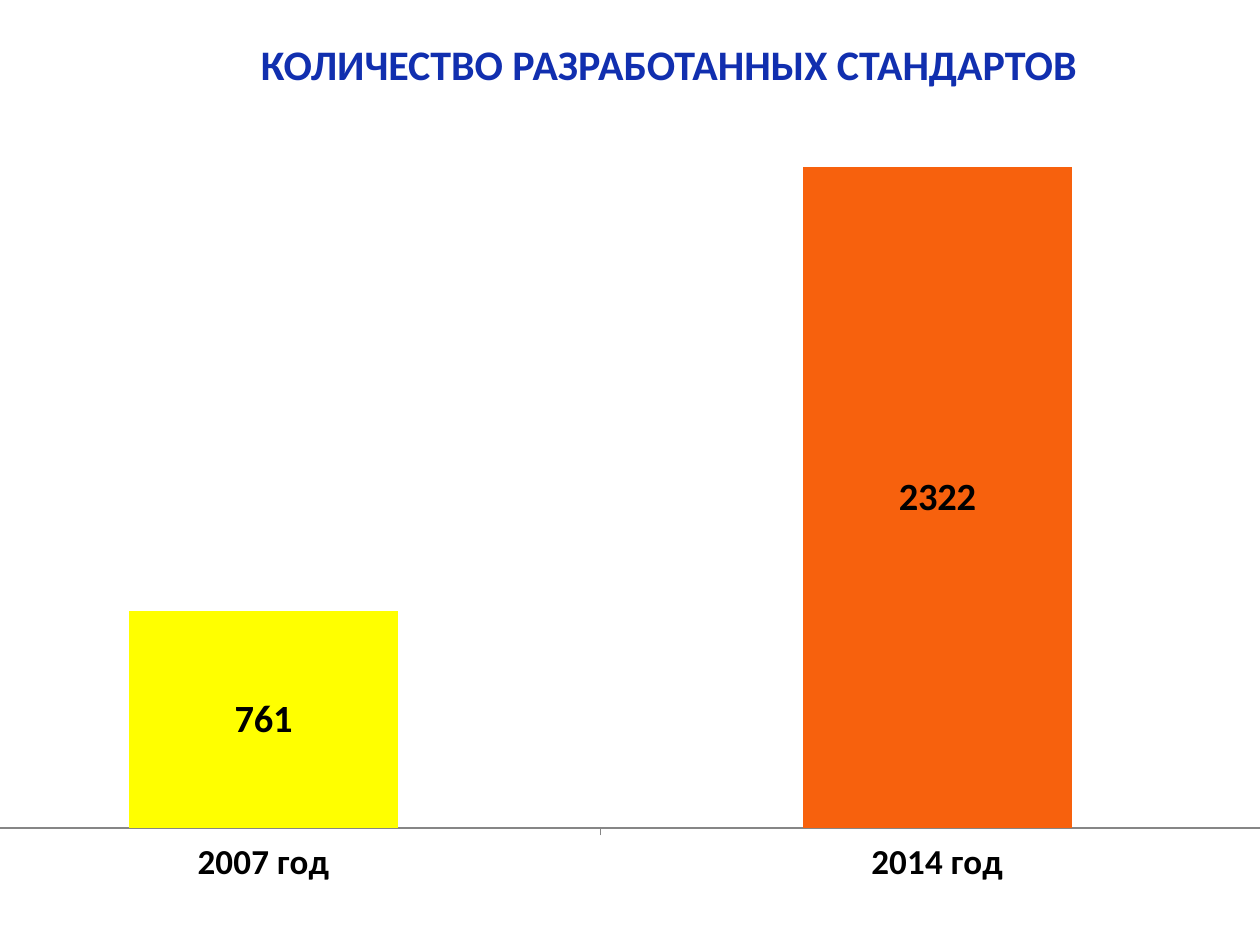
"""Build a slide with a column chart of the number of standards developed."""
from lxml import etree
from pptx import Presentation
from pptx import util as u
from pptx.chart.data import CategoryChartData
from pptx.dml.color import RGBColor
from pptx.enum import chart as ch, text
from pptx.oxml.ns import qn

PX = 914400 // 126
FONT = "Calibri"


def box(*lengths):
    return [u.Emu(n * PX) for n in lengths]


def style(font, size, color="000000", bold=True):
    font.name, font.size, font.bold = FONT, u.Pt(size), bold
    font.color.rgb = RGBColor.from_string(color)


prs = Presentation()
prs.slide_width, prs.slide_height = u.Inches(10), u.Inches(7.5)
slide = prs.slides.add_slide(prs.slide_layouts[5])

heading = slide.shapes.title
heading.left, heading.top, heading.width, heading.height = box(213, 32, 912, 63)
heading.text_frame.text = "КОЛИЧЕСТВО РАЗРАБОТАННЫХ СТАНДАРТОВ"
heading.text_frame.vertical_anchor = text.MSO_ANCHOR.TOP
heading.text_frame.auto_size = text.MSO_AUTO_SIZE.SHAPE_TO_FIT_TEXT
heading_line = heading.text_frame.paragraphs[0]
heading_line.alignment = text.PP_ALIGN.CENTER
style(heading_line.font, 24, "112FAF")

counts = CategoryChartData()
counts.categories = ["2007 год", "2014 год"]
counts.add_series("Series 1", [761, 2322])
standards = slide.shapes.add_chart(
    ch.XL_CHART_TYPE.COLUMN_STACKED, *box(-74, 116, 1349, 774), counts
).chart
standards.has_legend = False
standards.has_title = False
style(standards.font, 18, bold=False)

years = standards.category_axis
years.major_tick_mark = ch.XL_TICK_MARK.OUTSIDE
years.format.line.color.rgb = RGBColor.from_string("868686")
style(years.tick_labels.font, 20)

scale = standards.value_axis
scale.minimum_scale, scale.maximum_scale = 0, 2500
scale.has_major_gridlines = False
scale.visible = False

columns = standards.plots[0]
columns.gap_width, columns.overlap = 150, 100
columns.vary_by_categories = False
columns.has_data_labels = True
columns.data_labels.show_value = True
columns.data_labels.position = ch.XL_LABEL_POSITION.CENTER
style(columns.data_labels.font, 22)
for index, color in enumerate(["FFFF00", "F7610D"]):
    fill = columns.series[0].points[index].format.fill
    fill.solid()
    fill.fore_color.rgb = RGBColor.from_string(color)

plot_area = standards._chartSpace.chart.plotArea
for old_layout in plot_area.findall(qn("c:layout")):
    plot_area.remove(old_layout)
layout = etree.Element(qn("c:layout"))
plot_area.insert(0, layout)
manual = etree.SubElement(layout, qn("c:manualLayout"))
for tag, value in [
    ("layoutTarget", "inner"), ("xMode", "edge"), ("yMode", "edge"),
    ("x", "0"), ("y", "0"), ("w", "1"), ("h", "0.92"),
]:
    etree.SubElement(manual, qn(f"c:{tag}")).set("val", value)

prs.save("out.pptx")
